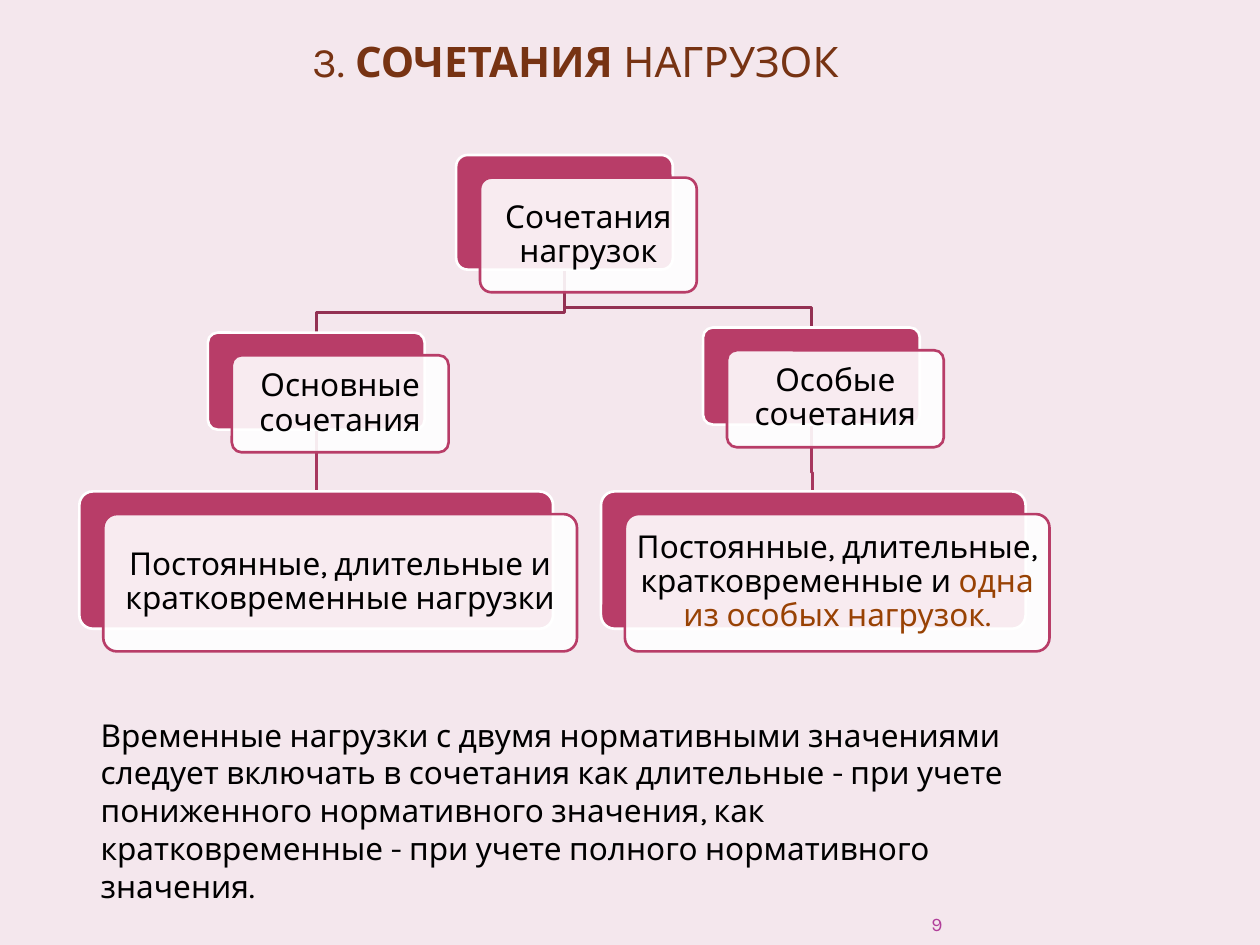
from lxml.etree import SubElement
from pptx import Presentation
from pptx.dml.color import RGBColor
from pptx.enum.shapes import MSO_CONNECTOR, MSO_SHAPE
from pptx.enum.text import MSO_ANCHOR, PP_ALIGN
from pptx.oxml.ns import qn
from pptx.util import Inches, Pt

FONT = "Karla"
BACKGROUND = RGBColor(0xF4, 0xE7, 0xED)
BLACK = RGBColor(0x00, 0x00, 0x00)
WHITE = RGBColor(0xFF, 0xFF, 0xFF)
BROWN = RGBColor(0x77, 0x33, 0x13)
ORANGE = RGBColor(0x98, 0x42, 0x04)
PURPLE = RGBColor(0xB1, 0x3F, 0x9A)
RASPBERRY = RGBColor(0xB8, 0x3D, 0x68)
UPPER_LINE = RGBColor(0x93, 0x31, 0x53)
LOWER_LINE = RGBColor(0xA7, 0x37, 0x5E)

presentation = Presentation()
presentation.slide_width = Inches(10)
presentation.slide_height = Inches(7.5)
slide = presentation.slides.add_slide(presentation.slide_layouts[6])
slide.background.fill.solid()
slide.background.fill.fore_color.rgb = BACKGROUND


def add_text(box, runs, size, color, alignment):
    frame = box.text_frame
    frame.word_wrap = True
    paragraph = frame.paragraphs[0]
    paragraph.alignment = alignment
    paragraph.font.name = FONT
    paragraph.font.size = Pt(size)
    paragraph.font.color.rgb = color
    for text in runs:
        paragraph.add_run().text = text
    return paragraph


def add_card(left, top, width, height, fill, line):
    card = slide.shapes.add_shape(
        MSO_SHAPE.ROUNDED_RECTANGLE, Inches(left), Inches(top), Inches(width), Inches(height)
    )
    card.adjustments[0] = 0.1
    card.shadow.inherit = False
    card.fill.solid()
    card.fill.fore_color.rgb = fill
    card.line.color.rgb = line
    card.line.width = Pt(1.5)
    return card


title = slide.shapes.add_textbox(Inches(0.47), Inches(0.23), Inches(8.2), Inches(0.5))
paragraph = add_text(title, ["3. ", "СОЧЕТАНИЯ ", "НАГРУЗОК"], 24, BROWN, PP_ALIGN.CENTER)
paragraph.runs[1].font.bold = True

branches = [
    (UPPER_LINE, [(4.48, 2.14), (4.48, 2.48), (2.51, 2.48), (2.51, 2.64)]),
    (UPPER_LINE, [(4.48, 2.14), (4.48, 2.44), (6.44, 2.44), (6.44, 2.6)]),
    (LOWER_LINE, [(6.44, 3.36), (6.44, 3.75), (6.45, 3.75), (6.45, 3.9)]),
]
for color, points in branches:
    start, *rest = [(Inches(x), Inches(y)) for x, y in points]
    builder = slide.shapes.build_freeform(*start)
    builder.add_line_segments(rest, close=False)
    branch = builder.convert_to_shape()
    branch.shadow.inherit = False
    branch.fill.background()
    branch.line.color.rgb = color
    branch.line.width = Pt(1.5)

main_link = slide.shapes.add_connector(
    MSO_CONNECTOR.STRAIGHT, Inches(2.51), Inches(3.41), Inches(2.51), Inches(3.9)
)
main_link.line.color.rgb = LOWER_LINE
main_link.line.width = Pt(1.5)
SubElement(main_link._element.spPr, qn("a:effectLst"))

cards = [
    (3.62, 1.23, 1.72, 0.91, ["Сочетания нагрузок"]),
    (1.65, 2.64, 1.72, 0.77, ["Основные сочетания"]),
    (0.63, 3.9, 3.76, 1.09, ["Постоянные, длительные и кратковременные нагрузки"]),
    (5.58, 2.6, 1.72, 0.77, ["Особые сочетания"]),
    (4.77, 3.9, 3.37, 1.09,
     ["Постоянные, длительные, кратковременные и ", "одна из особых нагрузок."]),
]
backs = []
for left, top, width, height, runs in cards:
    backs.append(add_card(left, top, width, height, RASPBERRY, WHITE))
    front = add_card(left + 0.19, top + 0.18, width, height, WHITE, RASPBERRY)
    white = front.fill._xPr.find(qn("a:solidFill"))[0]
    SubElement(white, qn("a:alpha"), val="90000")
    frame = front.text_frame
    frame.margin_left = frame.margin_right = Inches(0.04)
    frame.margin_top = frame.margin_bottom = Inches(0.04)
    frame.vertical_anchor = MSO_ANCHOR.MIDDLE
    paragraph = add_text(front, runs, 18, BLACK, PP_ALIGN.CENTER)
    paragraph.line_spacing = 0.9
    for run in paragraph.runs[1:]:
        run.font.color.rgb = ORANGE

main_link.begin_connect(backs[1], 2)
main_link.end_connect(backs[2], 0)

note = slide.shapes.add_textbox(Inches(0.7), Inches(5.63), Inches(7.58), Inches(1.31))
add_text(
    note,
    ["Временные нагрузки с двумя нормативными значениями следует включать в сочетания "
     "как длительные - при учете пониженного нормативного значения, как кратковременные "
     "- при учете полного нормативного значения."],
    18, BLACK, PP_ALIGN.LEFT,
)

page_number = slide.shapes.add_textbox(Inches(6.84), Inches(7.17), Inches(0.64), Inches(0.25))
frame = page_number.text_frame
frame.margin_left = frame.margin_right = frame.margin_top = frame.margin_bottom = 0
frame.vertical_anchor = MSO_ANCHOR.BOTTOM
add_text(page_number, ["9"], 11, PURPLE, PP_ALIGN.RIGHT)

presentation.save("out.pptx")
